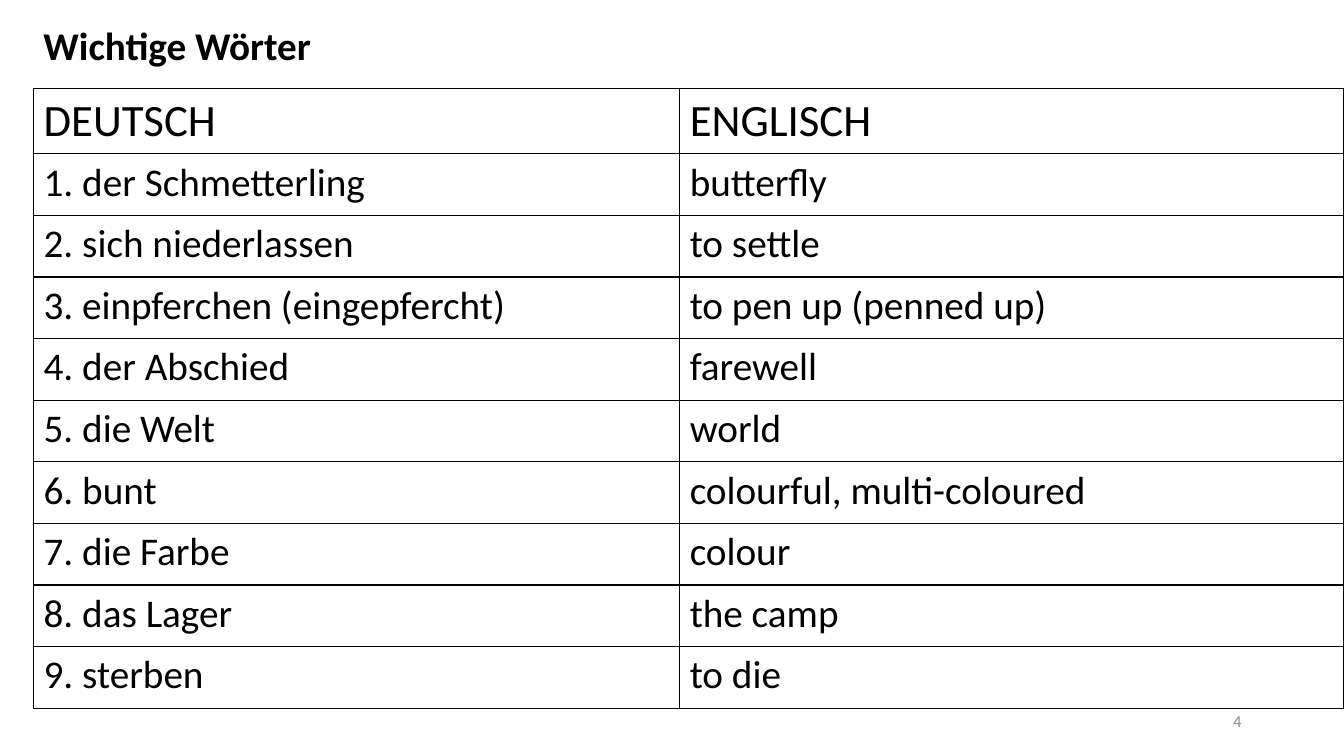
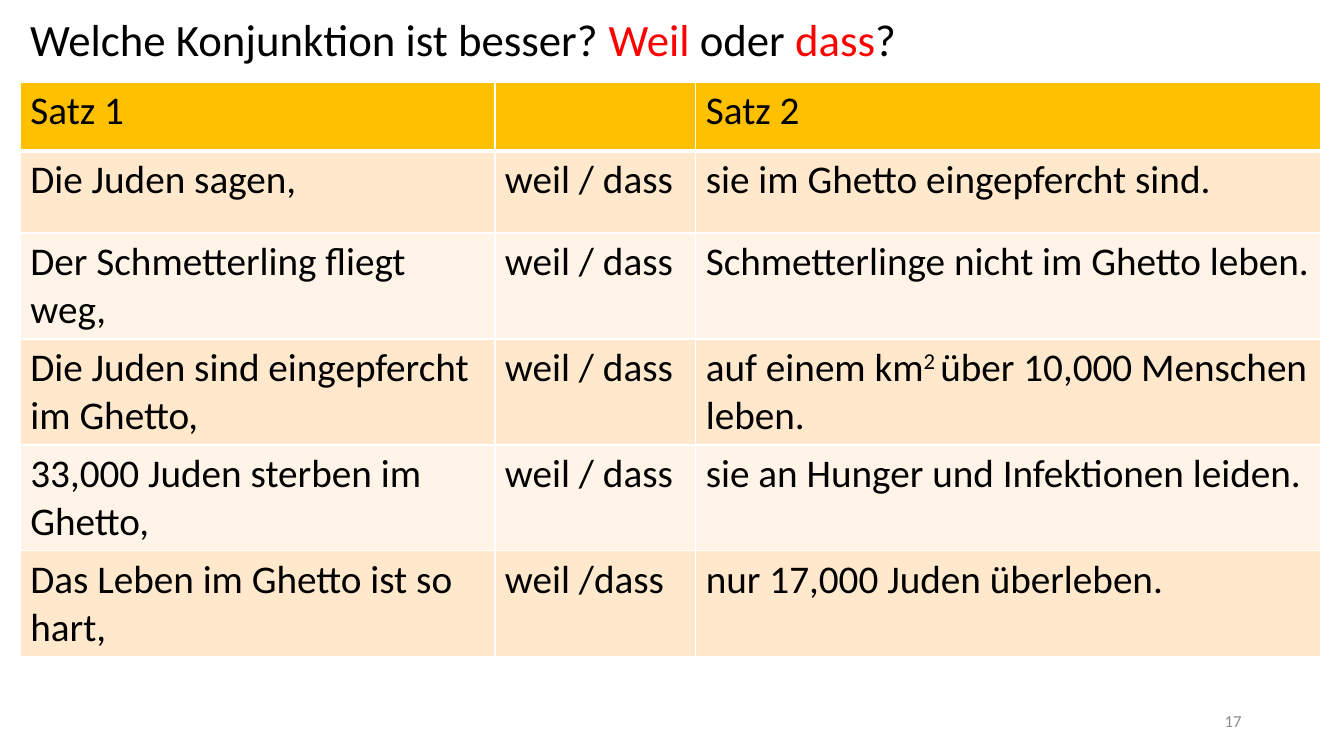
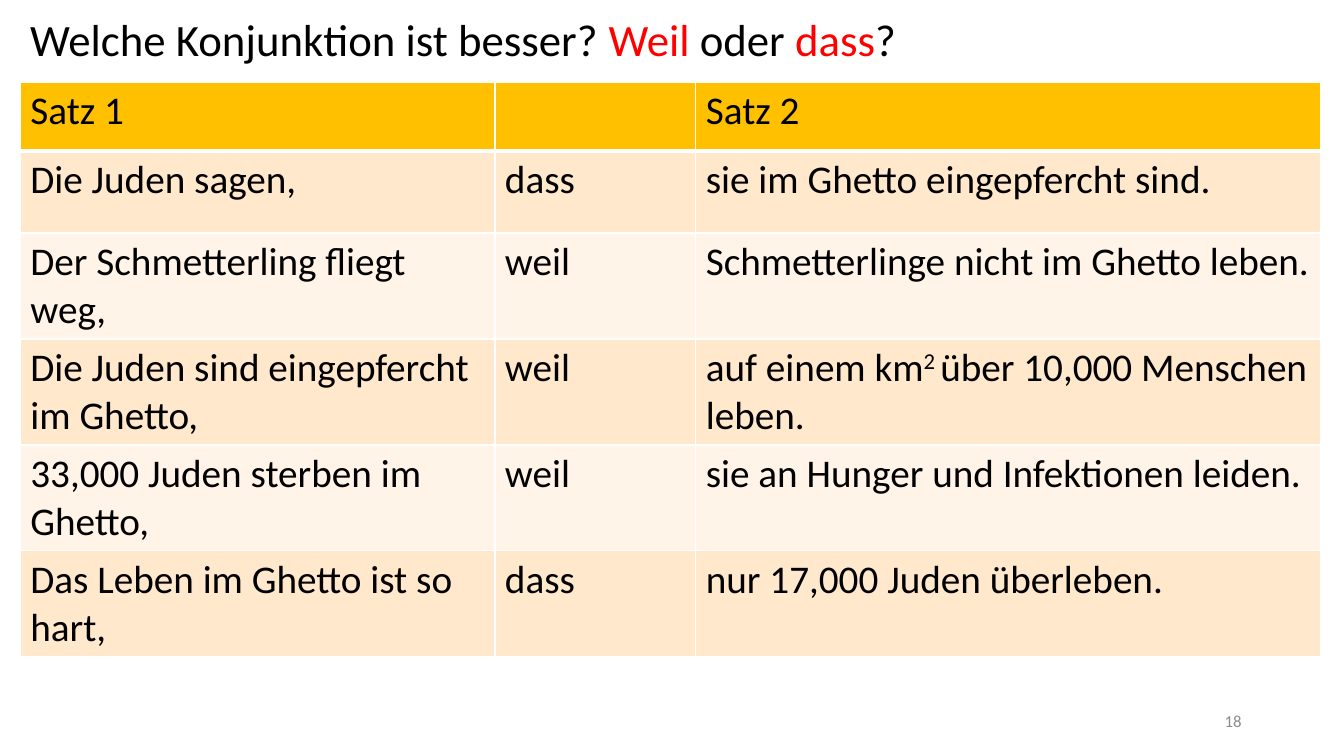
"""Build three German vocabulary and conjunction slides."""
from dataclasses import dataclass

from lxml.etree import SubElement
from pptx import Presentation
from pptx.dml.color import RGBColor
from pptx.enum.text import MSO_ANCHOR, MSO_AUTO_SIZE, PP_ALIGN
from pptx.oxml.ns import qn
from pptx.util import Pt


@dataclass(frozen=True)
class Theme:
    """Hold the shared font, colours and type sizes."""
    font: str = "Calibri"
    text: str = "000000"
    accent: str = "FF0000"
    muted: str = "8C8C8C"
    header: str = "FFC000"
    bands: tuple = ("FFE8CC", "FFF4E7")
    dark_rule: str = "000000"
    light_rule: str = "FFFFFF"
    large: int = 32
    body: int = 28
    small: int = 12


THEME = Theme()

VOCABULARY = [
    ("der Schmetterling", "butterfly"),
    ("sich niederlassen", "to settle"),
    ("einpferchen (eingepfercht)", "to pen up (penned up)"),
    ("der Abschied", "farewell"),
    ("die Welt", "world"),
    ("bunt", "colourful, multi-coloured"),
    ("die Farbe", "colour"),
    ("das Lager", "the camp"),
    ("sterben", "to die"),
]

QUESTION = [
    ("Welche Konjunktion ist besser? ", {}),
    ("Weil", {"color": THEME.accent}),
    (" oder ", {}),
    ("dass", {"color": THEME.accent}),
    ("?", {}),
]

SENTENCES = [
    ("Die Juden sagen,", "sie im Ghetto eingepfercht sind."),
    ("Der Schmetterling fliegt weg,", "Schmetterlinge nicht im Ghetto leben."),
    ("Die Juden sind eingepfercht im Ghetto,",
     [("auf einem km", {}), ("2 ", {"baseline": 30}), ("über 10,000 Menschen leben.", {})]),
    ("33,000 Juden sterben im Ghetto,", "sie an Hunger und Infektionen leiden."),
    ("Das Leben im Ghetto ist so hart,", "nur 17,000 Juden überleben."),
]

CHOICES = ["weil / dass"] * 4 + ["weil /dass"]
ANSWERS = ["dass", "weil", "weil", "weil", "dass"]


def add_runs(paragraph, content, size, color=THEME.text, bold=False):
    """Add a string or a list of styled runs to a paragraph."""
    pieces = [(content, {})] if isinstance(content, str) else content
    for text, style in pieces:
        run = paragraph.add_run()
        run.text = text
        run.font.name = THEME.font
        run.font.size = Pt(size)
        run.font.bold = bold
        run.font.color.rgb = RGBColor.from_string(style.get("color", color))
        if "baseline" in style:
            run.font._element.set("baseline", str(style["baseline"] * 1000))


def add_text(slide, box, content, size, anchor=MSO_ANCHOR.MIDDLE, align=PP_ALIGN.LEFT,
             spacing=1.0, **style):
    """Add a wrapped one-paragraph text box."""
    frame = slide.shapes.add_textbox(*map(Pt, box)).text_frame
    frame.word_wrap = True
    frame.auto_size = MSO_AUTO_SIZE.NONE
    frame.vertical_anchor = anchor
    paragraph = frame.paragraphs[0]
    paragraph.alignment = align
    paragraph.line_spacing = spacing
    add_runs(paragraph, content, size, **style)


def add_page_number(slide, number):
    """Add the page number at the lower right."""
    add_text(slide, (678, 500.5, 216, 28.75), str(number), THEME.small,
             align=PP_ALIGN.RIGHT, color=THEME.muted)


def set_borders(cell, color, top=1, bottom=1):
    """Draw the four borders of a table cell."""
    properties = cell._tc.get_or_add_tcPr()
    for side, width in (("L", 1), ("R", 1), ("T", top), ("B", bottom)):
        line = SubElement(properties, qn(f"a:ln{side}"), w=str(Pt(width)))
        fill = SubElement(line, qn("a:solidFill"))
        SubElement(fill, qn("a:srgbClr"), val=color)


def add_grid(slide, left, top, widths, heights, rows, rule,
             header_size=THEME.body, fills=None, header_rule=1):
    """Add a table with ruled cells and optional row fills."""
    table = slide.shapes.add_table(len(rows), len(widths), Pt(left), Pt(top),
                                   Pt(sum(widths)), Pt(sum(heights))).table
    table.first_row = table.horz_banding = False
    for column, width in zip(table.columns, widths):
        column.width = Pt(width)
    for index, (row, height, contents) in enumerate(zip(table.rows, heights, rows)):
        row.height = Pt(height)
        for cell, content in zip(row.cells, contents):
            set_borders(cell, rule, top=header_rule if index == 1 else 1,
                        bottom=header_rule if index == 0 else 1)
            if fills:
                cell.fill.solid()
                cell.fill.fore_color.rgb = RGBColor.from_string(fills[index])
            else:
                cell.fill.background()
            if content:
                add_runs(cell.text_frame.paragraphs[0], content,
                         THEME.body if index else header_size)


def add_vocabulary_slide(presentation, number):
    """Add the slide with the word list."""
    slide = presentation.slides.add_slide(presentation.slide_layouts[6])
    rows = [("DEUTSCH", "ENGLISCH")]
    rows += [(f"{position}. {german}", english)
             for position, (german, english) in enumerate(VOCABULARY, 1)]
    add_grid(slide, 24, 63.5, (461.5, 474.5), [46] + [44] * len(VOCABULARY),
             rows, THEME.dark_rule, header_size=THEME.large)
    add_text(slide, (24, 11.5, 462, 41), "Wichtige Wörter", THEME.body,
             anchor=MSO_ANCHOR.TOP, bold=True)
    add_page_number(slide, number)


def add_conjunction_slide(presentation, number, conjunctions):
    """Add a slide that joins sentence halves with conjunctions."""
    slide = presentation.slides.add_slide(presentation.slide_layouts[6])
    add_text(slide, (14.5, 8.5, 916.5, 42.5), QUESTION, THEME.large, spacing=0.9)
    rows = [("Satz 1", "", "Satz 2")]
    rows += [(first, conjunction, second)
             for (first, second), conjunction in zip(SENTENCES, conjunctions)]
    fills = [THEME.header] + [THEME.bands[index % 2] for index in range(len(SENTENCES))]
    add_grid(slide, 14.5, 58.5, (339, 143.5, 446.5), [49.5, 58.5] + [75.6] * 4,
             rows, THEME.light_rule, fills=fills, header_rule=3)
    add_page_number(slide, number)


def main():
    """Build and save the presentation."""
    presentation = Presentation()
    presentation.slide_width, presentation.slide_height = Pt(960), Pt(540)
    add_vocabulary_slide(presentation, 4)
    add_conjunction_slide(presentation, 17, CHOICES)
    add_conjunction_slide(presentation, 18, ANSWERS)
    presentation.save("out.pptx")


if __name__ == "__main__":
    main()
